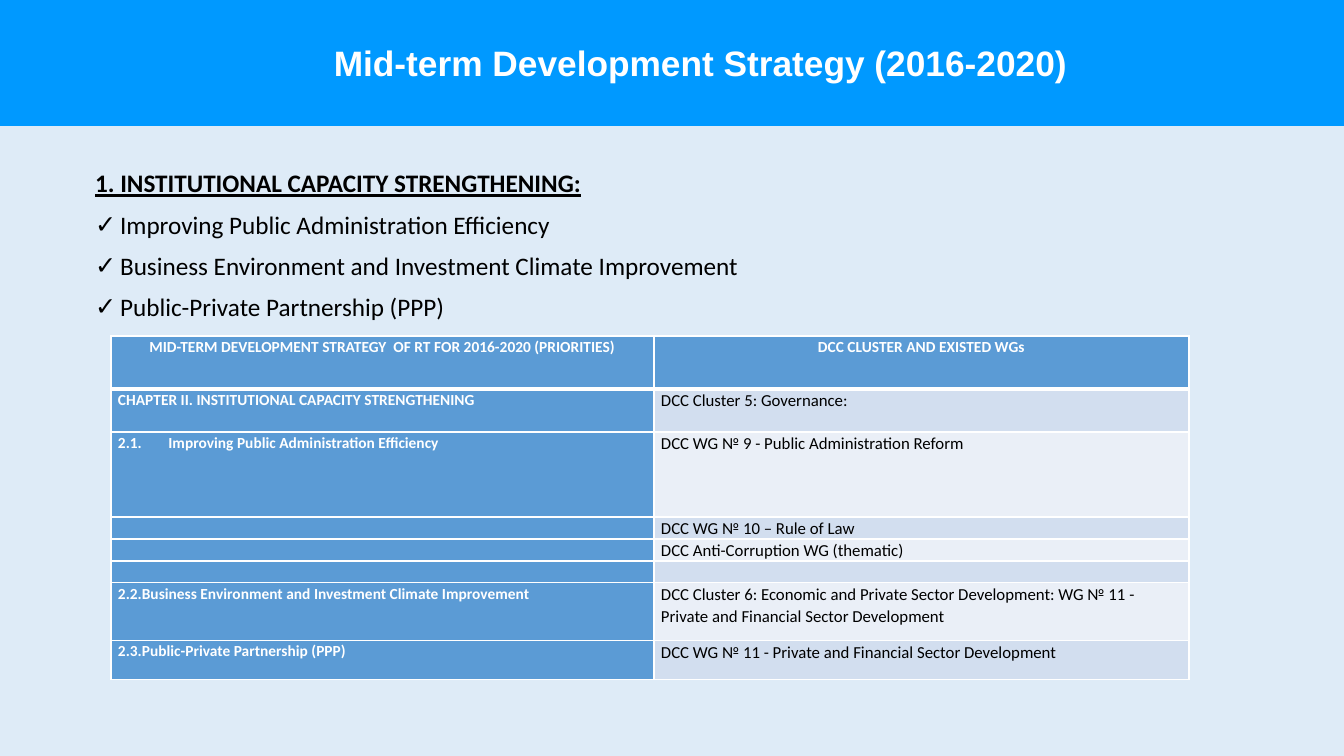
from lxml import etree
from pptx import Presentation
from pptx import util as u
from pptx.dml.color import RGBColor
from pptx.enum import shapes, text
from pptx.oxml.ns import qn

PX = 12192000 / 1344
INK = {"band": "0099FF", "page": "DEEBF7", "head": "5B9BD5", "odd": "D2DEEF",
       "even": "EAEFF7", "white": "FFFFFF", "black": "000000"}


def px(n):
    return u.Emu(round(n * PX))


def write(par, words, size, color="black", font="Calibri", bold=False,
          line=False, align=text.PP_ALIGN.LEFT, space=0.9, before=0):
    par.alignment = align
    par.line_spacing = space
    par.space_before = u.Pt(before)
    par.space_after = u.Pt(0)
    if not words:
        etree.SubElement(par._p, qn("a:endParaRPr"), sz=str(size * 100))
        return
    run = par.add_run()
    run.text = words
    run.font.size = u.Pt(size)
    run.font.name = font
    run.font.bold = bold
    run.font.underline = line
    run.font.color.rgb = RGBColor.from_string(INK[color])


deck = Presentation()
deck.slide_width, deck.slide_height = px(1344), px(756)
slide = deck.slides.add_slide(deck.slide_layouts[1])
slide.background.fill.solid()
slide.background.fill.fore_color.rgb = RGBColor.from_string(INK["page"])

# Banner behind the title
band = slide.shapes.add_shape(shapes.MSO_SHAPE.RECTANGLE, 0, 0, px(1344), px(126))
band.shadow.inherit = False
band.fill.solid()
band.fill.fore_color.rgb = RGBColor.from_string(INK["band"])
band.line.fill.background()
slide.shapes.element.insert(2, band.element)

title, body = slide.placeholders
for box, area in ((title, (75, 12, 1251, 106)), (body, (85, 166, 1169, 569))):
    box.left, box.top, box.width, box.height = map(px, area)
    box.text_frame.word_wrap = True
    box.text_frame.auto_size = text.MSO_AUTO_SIZE.NONE
title.text_frame.vertical_anchor = text.MSO_ANCHOR.MIDDLE
body.text_frame.vertical_anchor = text.MSO_ANCHOR.TOP
write(title.text_frame.paragraphs[0], "Mid-term Development Strategy (2016-2020)",
      25.2, "white", "Arial", bold=True, align=text.PP_ALIGN.CENTER)

# Heading and ticked list
par = body.text_frame.paragraphs[0]
write(par, "1. INSTITUTIONAL CAPACITY STRENGTHENING:", 18, bold=True, line=True)
props = par._p.get_or_add_pPr()
props.set("marL", "0")
props.set("indent", "0")
etree.SubElement(props, qn("a:buNone"))
for goal in ("Improving Public Administration Efficiency",
             "Business Environment and Investment Climate Improvement",
             "Public-Private Partnership (PPP)"):
    par = body.text_frame.add_paragraph()
    write(par, goal, 18, before=10)
    props = par._p.get_or_add_pPr()
    props.set("marL", str(px(25)))
    props.set("indent", str(-px(25)))
    etree.SubElement(props, qn("a:buChar"), char="✓")

# Priorities and working groups: height, left text, right text
rows = [
    (53, "MID-TERM DEVELOPMENT STRATEGY  OF RT FOR 2016-2020 (PRIORITIES)",
     "DCC CLUSTER AND EXISTED WGs"),
    (43, "CHAPTER II. INSTITUTIONAL CAPACITY STRENGTHENING",
     "DCC Cluster 5: Governance:"),
    (85, "2.1.\tImproving Public Administration Efficiency",
     "DCC WG № 9 - Public Administration Reform"),
    (22, "", "DCC WG № 10 – Rule of Law"),
    (22, "", "DCC Anti-Corruption WG (thematic)"),
    (22, "", ""),
    (58, "2.2.Business Environment and Investment Climate Improvement",
     "DCC Cluster 6: Economic and Private Sector Development: "
     "WG № 11 - Private and Financial Sector Development"),
    (39, "2.3.Public-Private Partnership (PPP)",
     "DCC WG № 11 - Private and Financial Sector Development"),
]
high = sum(row[0] for row in rows)
table = slide.shapes.add_table(len(rows), 2, px(111), px(336), px(1078), px(high)).table
table.columns[0].width, table.columns[1].width = px(543), px(535)

for r, (tall, *words) in enumerate(rows):
    table.rows[r].height = px(tall)
    for c, label in enumerate(words):
        cell = table.cell(r, c)
        cell.margin_left = cell.margin_right = px(7)
        cell.margin_top = cell.margin_bottom = 0
        props = cell._tc.get_or_add_tcPr()
        for side in "LRTB":
            thick = 3 if (r, side) in ((0, "B"), (1, "T")) else 1
            edge = etree.SubElement(props, qn("a:ln" + side), w=str(u.Pt(thick)))
            paint = etree.SubElement(edge, qn("a:solidFill"))
            etree.SubElement(paint, qn("a:srgbClr"), val=INK["white"])
        head = r == 0 or c == 0
        tone = "head" if head else "odd" if r % 2 else "even"
        cell.fill.solid()
        cell.fill.fore_color.rgb = RGBColor.from_string(INK[tone])
        write(cell.text_frame.paragraphs[0], label, 11 if head else 12,
              "white" if head else "black", bold=head, space=1.07,
              align=text.PP_ALIGN.LEFT if r else text.PP_ALIGN.CENTER)

deck.save("out.pptx")
